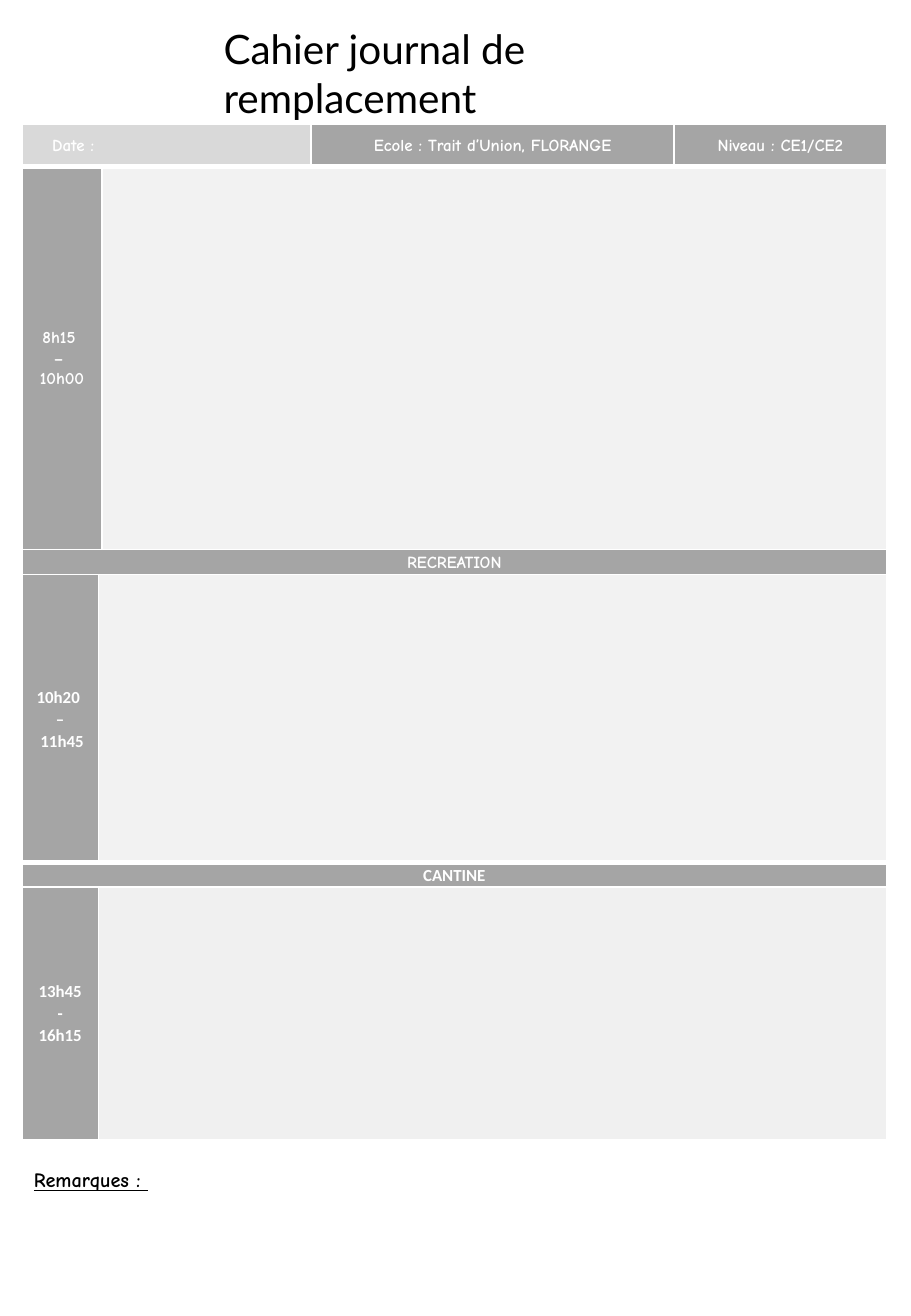
"""Build a one-page substitute teacher's daily log."""
from lxml import etree
from pptx import Presentation
from pptx.dml.color import RGBColor
from pptx.enum.text import MSO_ANCHOR, MSO_AUTO_SIZE, PP_ALIGN
from pptx.oxml.ns import qn
from pptx.util import Inches, Pt

MIDDLE, TOP = MSO_ANCHOR.MIDDLE, MSO_ANCHOR.TOP
LEFT, CENTER = PP_ALIGN.LEFT, PP_ALIGN.CENTER
FIXED = MSO_AUTO_SIZE.NONE

WHITE, BLACK = "FFFFFF", "000000"
GREY, SILVER, PALE, SOFT = "A5A5A5", "D9D9D9", "F2F2F2", "F0F0F0"
EDGE = 0.18

# A None cell continues the cell on its left.
MORNING = {
    "top": 1.02, "font": "Comic Neue", "pad": 0.05,
    "cols": [0.66, 1.72, 2.99, 1.75], "rows": [0.35, 3.15, 0.21],
    "cells": [
        [("Date :", SILVER), None, ("Ecole : Trait d’Union, FLORANGE", GREY),
         ("Niveau : CE1/CE2", GREY)],
        [("8h15 \n– \n10h00", GREY), ("", PALE), None, None],
        [("RECREATION", GREY), None, None, None],
    ],
}
LATER = {
    "top": 4.73, "font": "Calibri", "pad": 0.04,
    "cols": [0.63, 6.49], "rows": [2.37, 0.2, 2.08],
    "cells": [
        [("10h20 \n–\n 11h45", GREY), ("", PALE)],
        [("CANTINE", GREY), None],
        [("13h45\n-\n16h15", GREY), ("", SOFT)],
    ],
}


def paint(hue):
    return RGBColor.from_string(hue)


def style(para, font, size, hue, bold=False, line=False):
    for run in para.runs:
        face = run.font
        face.name, face.size = font, Pt(size)
        face.bold, face.underline = bold, line
        face.color.rgb = paint(hue)


def border(cell, row):
    widths = {"L": 1, "R": 1, "T": 3 if row == 1 else 1, "B": 3 if row == 0 else 1}
    props = cell._tc.get_or_add_tcPr()
    for side, width in widths.items():
        line = etree.SubElement(props, qn(f"a:ln{side}"), w=str(Pt(width)))
        fill = etree.SubElement(line, qn("a:solidFill"))
        etree.SubElement(fill, qn("a:srgbClr"), val=WHITE)


def fill_cell(cell, text, hue, font, pad):
    cell.fill.solid()
    cell.fill.fore_color.rgb = paint(hue)
    cell.vertical_anchor = MIDDLE
    cell.margin_left = cell.margin_right = Inches(pad)
    cell.margin_top = cell.margin_bottom = 0
    cell.text_frame.text = text
    for para in cell.text_frame.paragraphs:
        para.alignment, para.line_spacing = CENTER, 1.07
        style(para, font, 10, WHITE, bold=True)


def add_grid(slide, spec):
    cols, rows = spec["cols"], spec["rows"]
    table = slide.shapes.add_table(
        len(rows), len(cols), Inches(EDGE), Inches(spec["top"]),
        Inches(sum(cols)), Inches(sum(rows))).table
    for col, width in zip(table.columns, cols):
        col.width = Inches(width)
    for row, height in zip(table.rows, rows):
        row.height = Inches(height)
    for r, items in enumerate(spec["cells"]):
        for c, item in enumerate(items):
            cell = table.cell(r, c)
            border(cell, r)
            if item is None:
                continue
            end = c
            while end + 1 < len(items) and items[end + 1] is None:
                end += 1
            if end > c:
                cell.merge(table.cell(r, end))
            fill_cell(cell, *item, spec["font"], spec["pad"])
    return table


def set_text(box, text, place, font, size, anchor, **look):
    box.left, box.top, box.width, box.height = map(Inches, place)
    frame = box.text_frame
    frame.text = text
    frame.word_wrap, frame.auto_size = True, FIXED
    frame.vertical_anchor = anchor
    para = frame.paragraphs[0]
    para.alignment = LEFT
    style(para, font, size, BLACK, **look)


def main():
    deck = Presentation()
    deck.slide_width, deck.slide_height = Inches(7.5), Inches(10.83)
    slide = deck.slides.add_slide(deck.slide_layouts[5])
    set_text(slide.shapes.title, "Cahier journal de remplacement",
             (1.74, 0.35, 4.01, 0.5), "Lato", 24, MIDDLE)
    date = add_grid(slide, MORNING).cell(0, 0)
    date.margin_left = Inches(0.25)
    date.text_frame.paragraphs[0].alignment = LEFT
    add_grid(slide, LATER)
    place = (EDGE, 9.56, 1.28, 0.3)
    note = slide.shapes.add_textbox(*map(Inches, place))
    set_text(note, "Remarques : ", place, "Comic Neue", 12, TOP,
             bold=True, line=True)
    deck.save("out.pptx")


if __name__ == "__main__":
    main()
